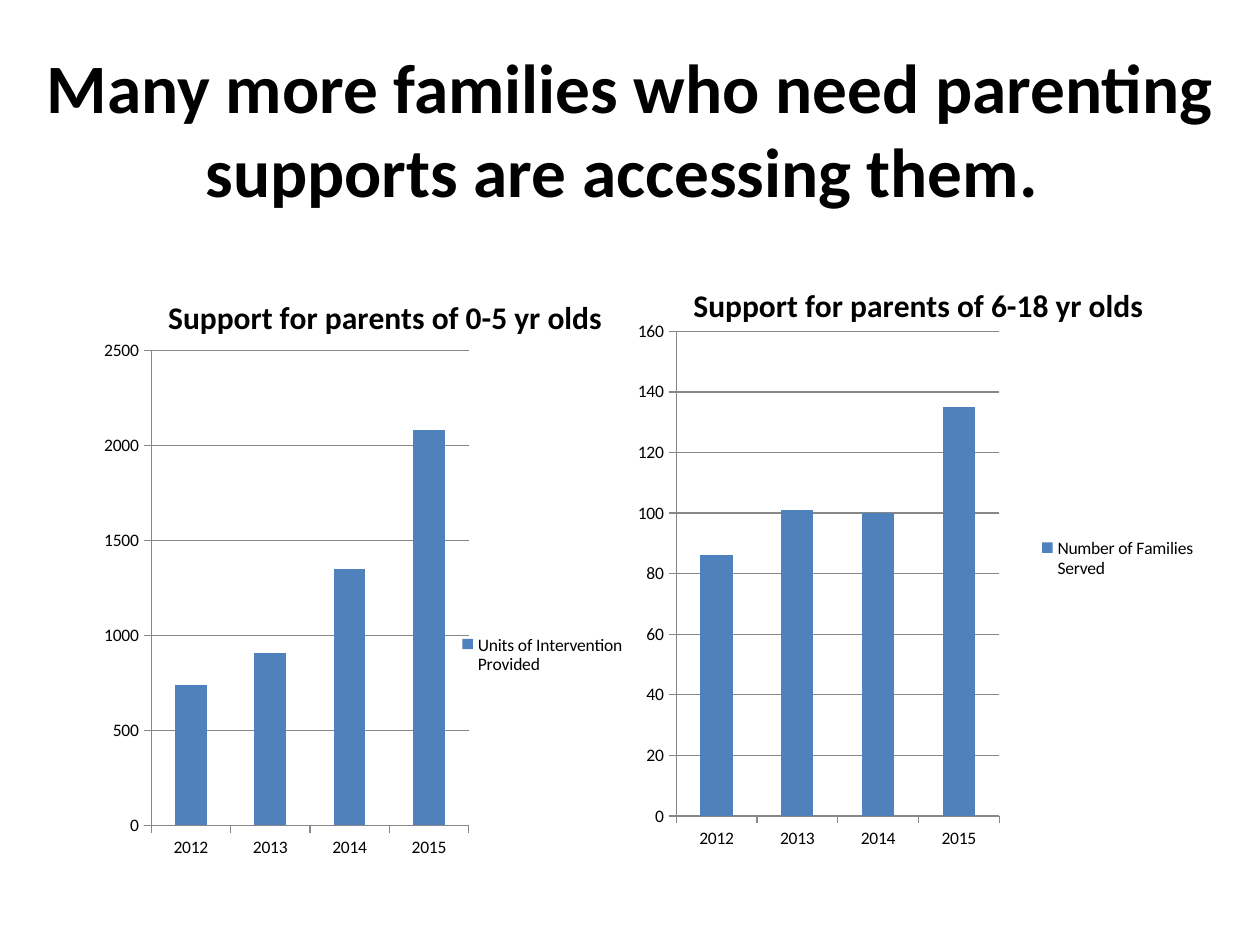
from pptx import Presentation
from pptx.chart.data import CategoryChartData
from pptx.dml.color import RGBColor
from pptx.enum.chart import XL_CHART_TYPE, XL_LEGEND_POSITION, XL_TICK_MARK
from pptx.enum.text import MSO_ANCHOR, PP_ALIGN
from pptx.oxml import parse_xml
from pptx.oxml.ns import nsdecls
from pptx.util import Inches, Pt

STACKED = XL_CHART_TYPE.COLUMN_STACKED
RIGHT = XL_LEGEND_POSITION.RIGHT
OUTSIDE = XL_TICK_MARK.OUTSIDE
MIDDLE = MSO_ANCHOR.MIDDLE
CENTER = PP_ALIGN.CENTER

BLACK = RGBColor(0x00, 0x00, 0x00)
BLUE = RGBColor(0x4F, 0x81, 0xBD)
GRAY = RGBColor(0x87, 0x87, 0x87)
FONT = "Calibri"
YEARS = ["2012", "2013", "2014", "2015"]


def set_font(font, size, bold=False):
    font.name = FONT
    font.size = Pt(size)
    font.bold = bold
    font.color.rgb = BLACK


def put_text(frame, text, size, bold=False, align=CENTER):
    para = frame.paragraphs[0]
    para.alignment = align
    run = para.add_run()
    run.text = text
    set_font(run.font, size, bold)


def add_heading(slide, text):
    box = slide.shapes.add_textbox(Inches(0), Inches(0.25), Inches(10), Inches(1.53))
    frame = box.text_frame
    frame.word_wrap = True
    frame.vertical_anchor = MIDDLE
    put_text(frame, text, 39.6, bold=True)


def place(part, left, top, width=None, height=None, inner=False):
    """Fix a chart part at fractions of the chart's size."""
    sizes = {"x": left, "y": top, "w": width, "h": height}
    sizes = {key: val for key, val in sizes.items() if val is not None}
    target = '<c:layoutTarget val="inner"/>' if inner else ""
    modes = "".join(f'<c:{key}Mode val="edge"/>' for key in "xy")
    vals = "".join(f'<c:{key} val="{val}"/>' for key, val in sizes.items())
    layout = parse_xml(
        f'<c:layout {nsdecls("c")}><c:manualLayout>{target}{modes}{vals}'
        "</c:manualLayout></c:layout>"
    )
    for old in part.findall(layout.tag):
        part.remove(old)
    # The layout follows the title's text or the legend's position.
    part.insert(0 if inner else 1, layout)


def style_axis(axis):
    axis.major_tick_mark = OUTSIDE
    axis.format.line.color.rgb = GRAY
    axis.format.line.width = Pt(0.75)
    set_font(axis.tick_labels.font, 10)


def add_columns(slide, box, title, name, values, top, step, plot, key, head=None):
    data = CategoryChartData()
    data.categories = YEARS
    data.add_series(name, values)
    area = [Inches(side) for side in box]
    chart = slide.shapes.add_chart(STACKED, *area, data).chart
    set_font(chart.font, 10)

    put_text(chart.chart_title.text_frame, title, 18, bold=True)
    chart.chart_title.include_in_layout = False
    if head:
        place(chart.chart_title._element, *head)

    chart.has_legend = True
    chart.legend.position = RIGHT
    chart.legend.include_in_layout = False
    set_font(chart.legend.font, 10)
    place(chart.legend._element, *key)

    bars = chart.plots[0]
    bars.gap_width = 150
    bars.overlap = 100
    bars.vary_by_categories = False
    fill = bars.series[0].format.fill
    fill.solid()
    fill.fore_color.rgb = BLUE

    scale = chart.value_axis
    for axis in (chart.category_axis, scale):
        style_axis(axis)
    scale.minimum_scale = 0
    scale.maximum_scale = top
    scale.major_unit = step
    scale.has_major_gridlines = True
    grid = scale.major_gridlines.format.line
    grid.color.rgb = GRAY
    grid.width = Pt(0.75)
    place(chart._chartSpace.chart.plotArea, *plot, inner=True)


def main():
    prs = Presentation()
    prs.slide_width = Inches(10)
    prs.slide_height = Inches(7.5)
    slide = prs.slides.add_slide(prs.slide_layouts[6])
    add_heading(
        slide, "Many more families who need parenting supports are accessing them. "
    )
    add_columns(
        slide, (5, 2.06, 4.58, 4.75), "Support for parents of 6-18 yr olds",
        "Number of Families Served", (86, 101, 100, 135), top=160, step=20,
        plot=(0.08, 0.12, 0.56, 0.81), key=(0.7, 0.46, 0.29, 0.08),
    )
    add_columns(
        slide, (0.75, 2.06, 4.5, 4.83), "Support for parents of 0-5 yr olds",
        "Units of Intervention Provided", (740, 910, 1350, 2080), top=2500, step=500,
        plot=(0.1, 0.15, 0.56, 0.78), key=(0.63, 0.61, 0.32, 0.08),
        head=(0.12, 0.05),
    )
    prs.save("out.pptx")


if __name__ == "__main__":
    main()
